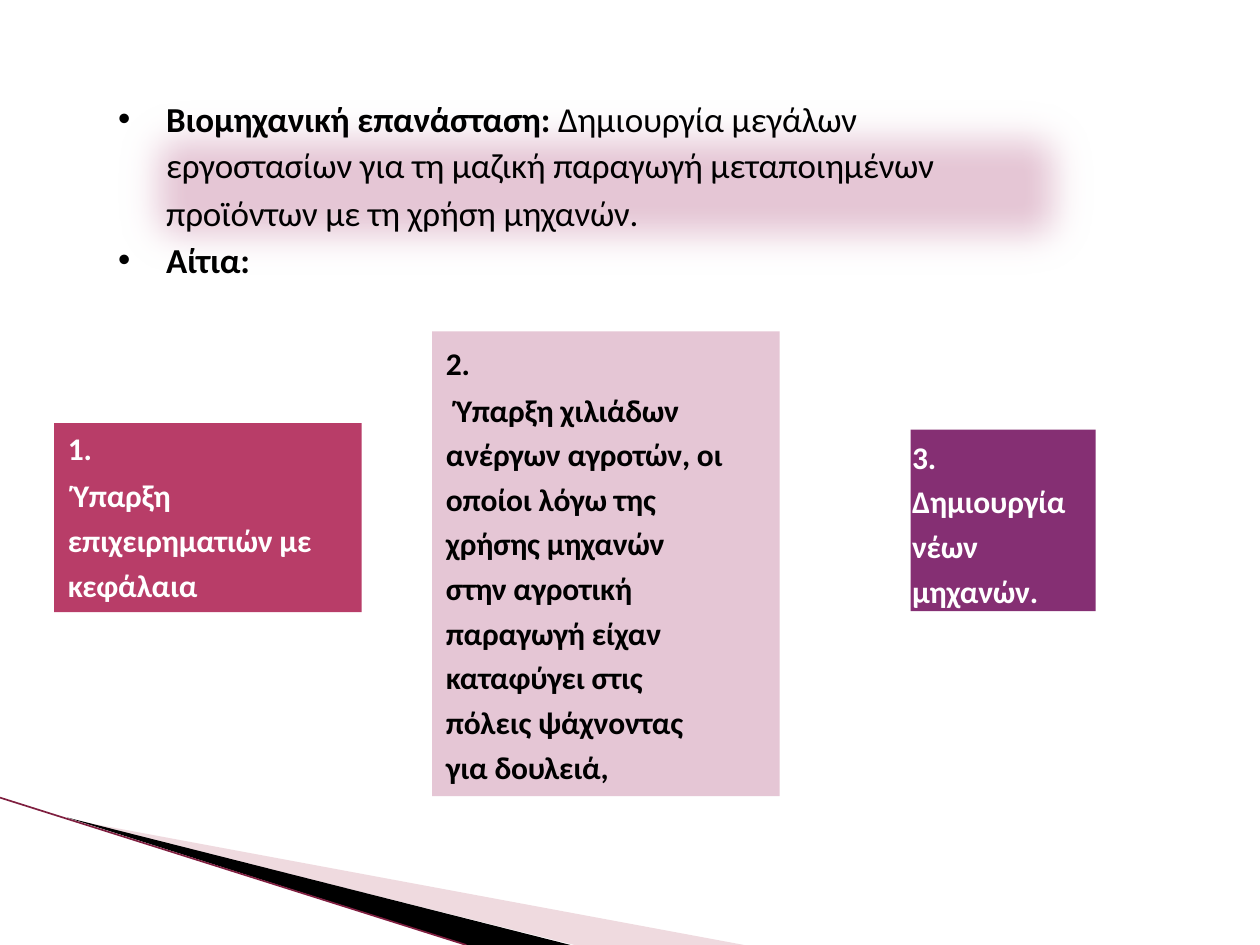
import pptx
import pptx.dml.color
import pptx.enum.shapes
import pptx.enum.text
import pptx.oxml.ns
import pptx.util
from lxml import etree

Cm = pptx.util.Cm
Pt = pptx.util.Pt
RGBColor = pptx.dml.color.RGBColor
qn = pptx.oxml.ns.qn

WHITE = RGBColor(0xFF, 0xFF, 0xFF)
BLACK = RGBColor(0, 0, 0)
ROSE = RGBColor(0xB8, 0x3D, 0x68)
PALE_ROSE = RGBColor(0xE5, 0xC6, 0xD5)
DUSTY_ROSE = RGBColor(0xD8, 0xA3, 0xAF)
MAROON = RGBColor(0x7F, 0x1F, 0x40)
PURPLE = RGBColor(0x85, 0x2F, 0x73)


class CausesSlide:
    """Holds the style and the current slide, and draws each kind of element."""

    font_name = "Calibri"
    tracking = "-10"

    def __init__(self, deck):
        self.slide = deck.slides.add_slide(deck.slide_layouts[6])

    def wedge(self, points, colour, opacity=None):
        start, *rest = [(Cm(x), Cm(y)) for x, y in points]
        builder = self.slide.shapes.build_freeform(*start)
        builder.add_line_segments(rest, close=True)
        wedge = builder.convert_to_shape()
        wedge.shadow.inherit = False
        wedge.fill.solid()
        wedge.fill.fore_color.rgb = colour
        wedge.line.fill.background()
        if opacity:
            tint = next(wedge._element.spPr.iter(qn("a:srgbClr")))
            etree.SubElement(tint, qn("a:alpha")).set("val", str(opacity * 1000))

    def edge(self, x1, y1, x2, y2, colour, width):
        edge = self.slide.shapes.add_connector(
            pptx.enum.shapes.MSO_CONNECTOR.STRAIGHT, Cm(x1), Cm(y1), Cm(x2), Cm(y2))
        edge.line.color.rgb = colour
        edge.line.width = Pt(width)
        etree.SubElement(edge._element.spPr, qn("a:effectLst"))

    def panel(self, left, top, width, height, colour):
        panel = self.slide.shapes.add_shape(
            pptx.enum.shapes.MSO_SHAPE.RECTANGLE, Cm(left), Cm(top), Cm(width), Cm(height))
        panel.shadow.inherit = False
        panel.fill.solid()
        panel.fill.fore_color.rgb = colour
        panel.line.fill.background()
        panel.text_frame.word_wrap = True
        panel.text_frame.vertical_anchor = pptx.enum.text.MSO_ANCHOR.TOP
        return panel

    def soften(self, panel, radius, border):
        panel.line.color.rgb = border
        panel.line.width = Pt(0.75)
        effects = panel._element.spPr.find(qn("a:effectLst"))
        etree.SubElement(effects, qn("a:softEdge")).set("rad", str(Pt(radius)))

    def paragraph(self, panel, index, lines, colour, size=18, spacing=None, before=0,
                  margin=0.03, indent=0.0, bullet=False):
        frame = panel.text_frame
        paragraph = frame.add_paragraph() if index else frame.paragraphs[0]
        properties = paragraph._p.get_or_add_pPr()
        properties.set("marL", str(Cm(margin)))
        properties.set("indent", str(Cm(indent)))
        if bullet:
            etree.SubElement(properties, qn("a:buFont")).set("typeface", "Arial")
            etree.SubElement(properties, qn("a:buChar")).set("char", "•")
        paragraph.alignment = pptx.enum.text.PP_ALIGN.LEFT
        if spacing:
            paragraph.line_spacing = spacing
        if index:
            paragraph.space_before = Pt(before)
        for number, line in enumerate(lines):
            if number:
                paragraph.add_line_break()
            for words, bold in line:
                run = paragraph.add_run()
                run.text = words
                run.font.name = self.font_name
                run.font.size = Pt(size)
                run.font.bold = bold
                run.font.color.rgb = colour
                run._r.get_or_add_rPr().set("spc", self.tracking)

    def cause(self, place, fill, colour, paragraphs, spacing=None):
        panel = self.panel(*place, fill)
        for index, (lines, before, indent) in enumerate(paragraphs):
            self.paragraph(panel, index, [[(line, True)] for line in lines], colour,
                           spacing=spacing, before=before, indent=indent)
        return panel


def main():
    deck = pptx.Presentation()
    deck.slide_width, deck.slide_height = Cm(25.4), Cm(19.05)
    page = CausesSlide(deck)

    page.wedge([(1.4, 16.52), (15, 19.05), (11.58, 19.05)], DUSTY_ROSE, 40)
    page.wedge([(1.35, 16.48), (11.5, 19.05), (9.4, 19.05)], BLACK)
    page.edge(0, 16.08, 9.4, 19.05, MAROON, 0.95)

    definition = page.panel(2.11, 1.73, 20.19, 4.06, PALE_ROSE)
    page.soften(definition, 25, ROSE)
    definition_rows = [
        ([("Βιομηχανική επανάσταση: ", True), ("Δημιουργία μεγάλων", False)], Pt(27.4), 0, True),
        ([("εργοστασίων για τη μαζική παραγωγή μεταποιημένων", False)], Pt(25.9), 0, False),
        ([("προϊόντων με τη χρήση μηχανών.", False)], Pt(27.4), 0, False),
        ([("Αίτια:", True)], None, 2.9, True),
    ]
    for index, (runs, spacing, before, bullet) in enumerate(definition_rows):
        page.paragraph(definition, index, [runs], BLACK, 20, spacing, before,
                       margin=0.99, indent=-0.97 if bullet else 0, bullet=bullet)

    page.cause((1.09, 8.53, 6.2, 3.81), ROSE, WHITE, [
        (["1."], 0, 0),
        (["Ύπαρξη"], 5, 0.1),
        (["επιχειρηματιών με"], 4.1, 0),
        (["κεφάλαια"], 4.2, 0),
    ])
    page.cause((8.71, 6.68, 7.01, 9.37), PALE_ROSE, BLACK, [
        (["2."], 0, 0),
        (["Ύπαρξη χιλιάδων", "ανέργων αγροτών, οι", "οποίοι λόγω της"], 0.9, 0.2),
        (["χρήσης μηχανών", "στην αγροτική", "παραγωγή είχαν"], 0.1, 0),
        (["καταφύγει στις", "πόλεις ψάχνοντας", "για δουλειά,"], 0.1, 0),
    ], 1.18)
    machines = page.cause((18.36, 8.66, 3.73, 3.66), PURPLE, WHITE, [
        (["3.", "Δημιουργία", "νέων", "μηχανών."], 0, 0),
    ], 1.18).text_frame
    machines.margin_left = machines.margin_right = machines.margin_bottom = 0
    machines.margin_top = Cm(0.03)

    deck.save("out.pptx")


if __name__ == "__main__":
    main()
